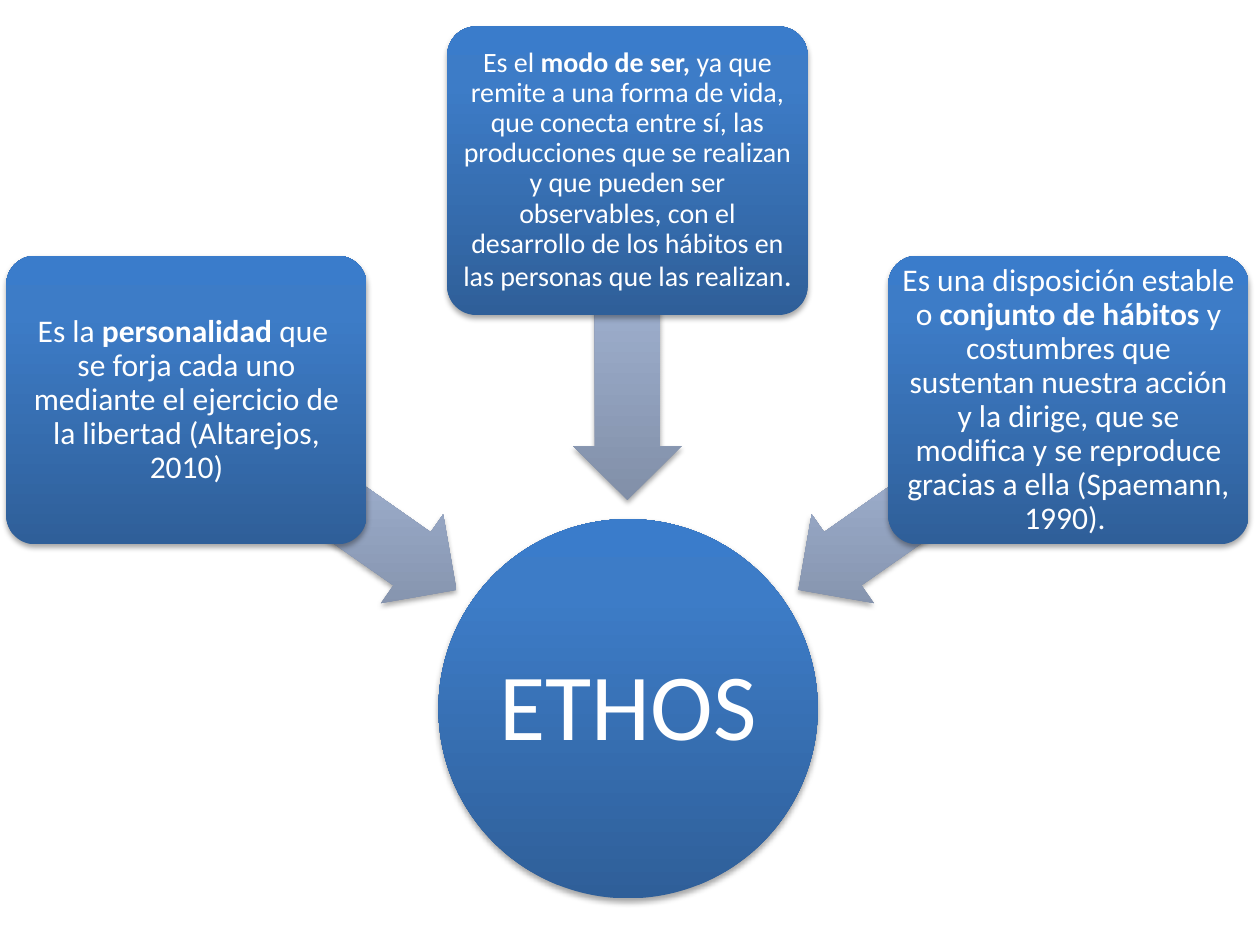
from dataclasses import dataclass

from lxml import etree
from pptx import Presentation
from pptx.dml.color import RGBColor
from pptx.enum.shapes import MSO_SHAPE
from pptx.enum.text import MSO_ANCHOR, PP_ALIGN
from pptx.oxml import parse_xml
from pptx.oxml.ns import qn
from pptx.util import Inches, Pt

ELLIPSE = MSO_SHAPE.OVAL
CARD = MSO_SHAPE.ROUNDED_RECTANGLE
ARROW = MSO_SHAPE.LEFT_ARROW
MIDDLE = MSO_ANCHOR.MIDDLE
CENTER = PP_ALIGN.CENTER

FONT = "Calibri"
WHITE = RGBColor(0xFF, 0xFF, 0xFF)
BLUE = ((0, RGBColor(0x2F, 0x5F, 0x99)), (80, RGBColor(0x3D, 0x7C, 0xC7)),
        (100, RGBColor(0x3A, 0x7C, 0xCB)))
GREY = ((0, RGBColor(0x81, 0x8F, 0xA8)), (80, RGBColor(0xA7, 0xB9, 0xDA)),
        (100, RGBColor(0xA7, 0xBA, 0xDC)))
NS = 'xmlns:a="http://schemas.openxmlformats.org/drawingml/2006/main"'
SHADOW = (
    f'<a:effectLst {NS}><a:outerShdw blurRad="40000" dist="23000" dir="5400000" '
    'rotWithShape="0"><a:srgbClr val="000000"><a:alpha val="35000"/></a:srgbClr>'
    '</a:outerShdw></a:effectLst>'
)

CARD_W, CARD_H, CARD_X, CARD_STEP = 2.86, 2.29, 0.05, 3.5
ARROW_W, ARROW_H = 2.62, 0.86
CARD_PAD = 0.07


@dataclass(frozen=True)
class Run:
    text: str
    size: int = 18
    bold: bool = False


@dataclass(frozen=True)
class Idea:
    top: float
    arrow_left: float
    arrow_top: float
    rotation: int
    inset: float
    runs: tuple[Run, ...]


IDEAS = (
    Idea(2.03, 1.24, 3.5, 215, 0.04, (
        Run("Es la "),
        Run("personalidad", bold=True),
        Run(" que  se forja cada uno mediante el ejercicio de la libertad "
            "(Altarejos, 2010)"),
    )),
    Idea(0.21, 3.67, 2.23, 270, 0.03, (
        Run("Es el ", 16),
        Run("modo de ser, ", 16, True),
        Run("ya que remite a una forma de vida, que conecta entre sí, las "
            "producciones que se realizan y que pueden ser observables, con el "
            "desarrollo de los hábitos en las personas que las realizan", 16),
        Run("."),
    )),
    Idea(2.03, 6.1, 3.5, 325, 0.04, (
        Run("Es una disposición estable o "),
        Run("conjunto de hábitos ", bold=True),
        Run("y costumbres que sustentan nuestra acción y la dirige, que se "
            "modifica y se reproduce gracias a ella (Spaemann, 1990). "),
    )),
)


def add_filled(s, kind, box: tuple[float, ...], stops: tuple,
               adjustments: tuple[float, ...] = (), rotation: int = 0) -> None:
    sp = s.shapes.add_shape(kind, *map(Inches, box))
    sp.rotation = rotation
    for i, value in enumerate(adjustments):
        sp.adjustments[i] = value
    grad = parse_xml(f'<a:gradFill {NS} rotWithShape="0"><a:gsLst/>'
                     '<a:lin ang="16200000" scaled="0"/></a:gradFill>')
    for position, color in stops:
        gs = etree.SubElement(grad[0], qn("a:gs"), pos=str(position * 1000))
        etree.SubElement(gs, qn("a:srgbClr"), val=str(color))
    spPr = sp._element.spPr
    spPr.append(grad)
    sp.line.fill.background()
    spPr.append(parse_xml(SHADOW))


def add_text(s, box: tuple[float, ...], runs: tuple[Run, ...],
             inset: float = 0.04) -> None:
    tf = s.shapes.add_textbox(*map(Inches, box)).text_frame
    tf.word_wrap = True
    tf.vertical_anchor = MIDDLE
    tf.margin_left = tf.margin_right = Inches(inset)
    tf.margin_top = tf.margin_bottom = Inches(inset)
    p = tf.paragraphs[0]
    p.alignment = CENTER
    p.line_spacing = 0.9
    for run in runs:
        r = p.add_run()
        r.text = run.text
        r.font.name = FONT
        r.font.size = Pt(run.size)
        r.font.bold = run.bold
        r.font.color.rgb = WHITE


def add_idea(s, idea: Idea, left: float) -> None:
    add_filled(s, ARROW, (idea.arrow_left, idea.arrow_top, ARROW_W, ARROW_H),
               GREY, (0.6, 0.5), idea.rotation)
    add_filled(s, CARD, (left, idea.top, CARD_W, CARD_H), BLUE, (0.1,))
    add_text(s, (left + CARD_PAD, idea.top + CARD_PAD,
                 CARD_W - 2 * CARD_PAD, CARD_H - 2 * CARD_PAD),
             idea.runs, idea.inset)


def main() -> None:
    prs = Presentation()
    prs.slide_width, prs.slide_height = Inches(10), Inches(7.5)
    s = prs.slides.add_slide(prs.slide_layouts[6])
    add_filled(s, ELLIPSE, (3.48, 4.12, 3.01, 3.01), BLUE)
    add_text(s, (3.92, 4.57, 2.13, 2.13), (Run("ETHOS", 54),))
    for i, idea in enumerate(IDEAS):
        add_idea(s, idea, CARD_X + i * CARD_STEP)
    prs.save("out.pptx")


if __name__ == "__main__":
    main()
